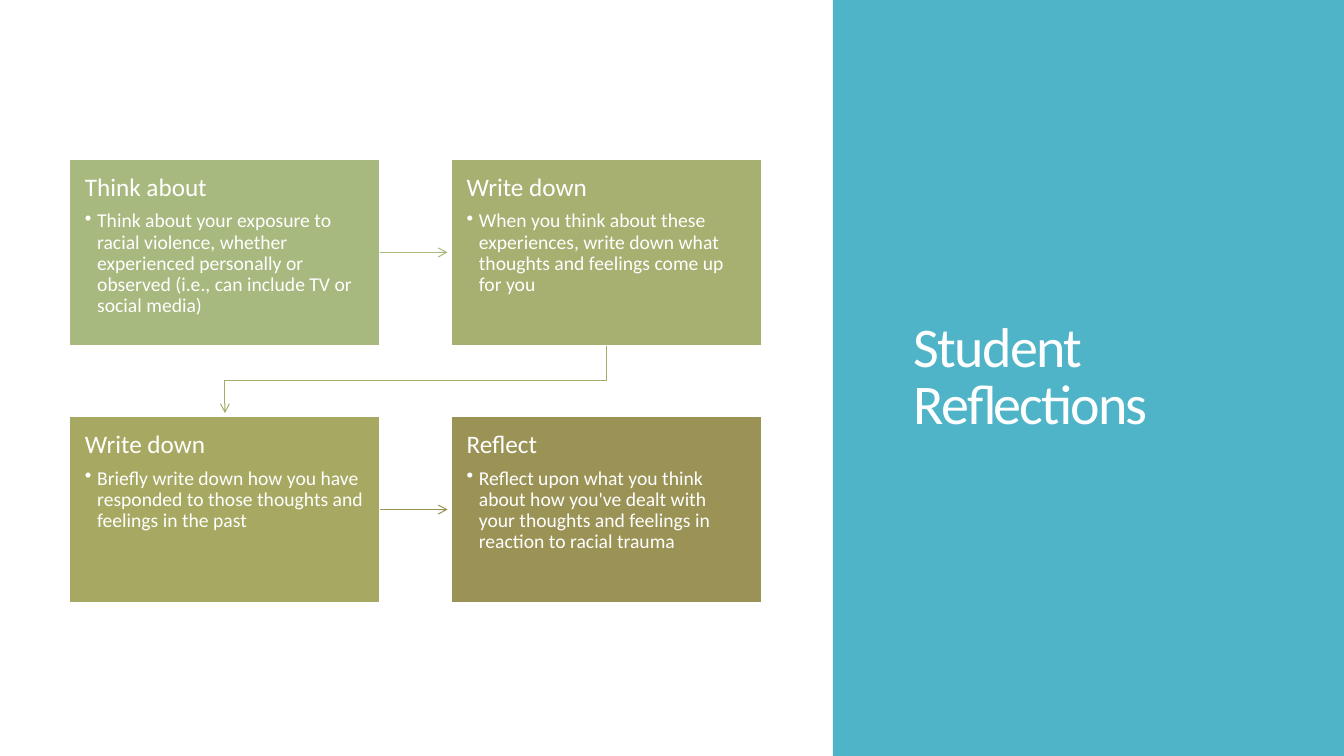
"""Build the Student Reflections slide: a four-step prompt flow beside a title panel."""
from lxml import etree
from pptx import Presentation
from pptx.dml.color import RGBColor
from pptx.enum.shapes import MSO_CONNECTOR, MSO_SHAPE
from pptx.enum.text import MSO_ANCHOR, PP_ALIGN
from pptx.oxml.ns import qn
from pptx.util import Cm, Pt

RECTANGLE = MSO_SHAPE.RECTANGLE
STRAIGHT = MSO_CONNECTOR.STRAIGHT
TOP, MIDDLE = MSO_ANCHOR.TOP, MSO_ANCHOR.MIDDLE
LEFT = PP_ALIGN.LEFT

COLORS = {
    "white": "FFFFFF",
    "panel": "50B4C8",
    "sage": "A8B97F",
    "moss": "A7B070",
    "olive": "A7A861",
    "bronze": "9B9256",
    "elbow": "A7AC68",
}
STEPS = [
    ("Think about", "Think about your exposure to racial violence, whether experienced "
     "personally or observed (i.e., can include TV or social media)", "sage"),
    ("Write down", "When you think about these experiences, write down what thoughts "
     "and feelings come up for you", "moss"),
    ("Write down", "Briefly write down how you have responded to those thoughts and "
     "feelings in the past", "olive"),
    ("Reflect", "Reflect upon what you think about how you've dealt with your thoughts "
     "and feelings in reaction to racial trauma", "bronze"),
]
STEP_LEFT, STEP_TOP = 1.76, 4.01
STEP_WIDTH, STEP_HEIGHT = 7.82, 4.7
COLUMN_PITCH, ROW_PITCH = 9.62, 6.48
ARROW_LENGTH = 1.7


def add_span(para, text, size):
    """Add one white Calibri run to a left-aligned paragraph."""
    para.alignment = LEFT
    span = para.add_run()
    span.text = text
    span.font.name = "Calibri"
    span.font.size = Pt(size)
    span.font.color.rgb = RGBColor.from_string(COLORS["white"])
    return span


def style_arrow(arrow, color):
    """Give a line its colour, thin width and open arrowhead, without a shadow."""
    arrow.line.color.rgb = RGBColor.from_string(COLORS[color])
    arrow.line.width = Pt(0.75)
    etree.SubElement(arrow.line._get_or_add_ln(), qn("a:tailEnd"), type="arrow")
    etree.SubElement(arrow._element.spPr, qn("a:effectLst"))


deck = Presentation()
deck.slide_width, deck.slide_height = Cm(33.87), Cm(19.05)
page = deck.slides.add_slide(deck.slide_layouts[6])

panel = page.shapes.add_shape(RECTANGLE, Cm(20.99), 0, Cm(12.88), Cm(19.05))
panel.shadow.inherit = False
panel.fill.solid()
panel.fill.fore_color.rgb = RGBColor.from_string(COLORS["panel"])
panel.line.fill.background()

title = page.shapes.add_textbox(Cm(22.78), Cm(1.78), Cm(9.3), Cm(15.52))
title.text_frame.word_wrap = True
title.text_frame.vertical_anchor = MIDDLE
para = title.text_frame.paragraphs[0]
para.line_spacing = 0.85
span = add_span(para, "Student Reflections", 40)
span.font._element.set("spc", "-120")

for index, (heading, prompt, color) in enumerate(STEPS):
    row, column = divmod(index, 2)
    box = page.shapes.add_shape(
        RECTANGLE, Cm(STEP_LEFT + column * COLUMN_PITCH), Cm(STEP_TOP + row * ROW_PITCH),
        Cm(STEP_WIDTH), Cm(STEP_HEIGHT))
    box.shadow.inherit = False
    box.fill.solid()
    box.fill.fore_color.rgb = RGBColor.from_string(COLORS[color])
    box.line.color.rgb = RGBColor.from_string(COLORS["white"])
    box.line.width = Pt(1)

    frame = box.text_frame
    frame.word_wrap = True
    frame.vertical_anchor = TOP
    frame.margin_left = frame.margin_right = Cm(0.38)
    frame.margin_top = frame.margin_bottom = Cm(0.4)

    para = frame.paragraphs[0]
    para.line_spacing, para.space_after = 0.9, Pt(6.3)
    add_span(para, heading, 18)

    para = frame.add_paragraph()
    para.level = 1
    para.line_spacing, para.space_after = 0.9, Pt(2.1)
    add_span(para, prompt, 14)
    properties = para._p.get_or_add_pPr()
    properties.set("marL", str(Cm(0.31)))
    properties.set("indent", str(-Cm(0.31)))
    etree.SubElement(properties, qn("a:buChar"), char="•")

for row, color in enumerate(("sage", "bronze")):
    start = STEP_LEFT + STEP_WIDTH
    middle = STEP_TOP + row * ROW_PITCH + STEP_HEIGHT / 2
    arrow = page.shapes.add_connector(
        STRAIGHT, Cm(start), Cm(middle), Cm(start + ARROW_LENGTH), Cm(middle))
    style_arrow(arrow, color)

first_center = STEP_LEFT + STEP_WIDTH / 2
second_center = first_center + COLUMN_PITCH
bottom = STEP_TOP + STEP_HEIGHT
bend = bottom + 0.89
outline = page.shapes.build_freeform(Cm(second_center), Cm(bottom))
outline.add_line_segments([
    (Cm(second_center), Cm(bend)),
    (Cm(first_center), Cm(bend)),
    (Cm(first_center), Cm(bottom + ARROW_LENGTH)),
], close=False)
elbow = outline.convert_to_shape()
elbow.fill.background()
style_arrow(elbow, "elbow")

deck.save("out.pptx")
